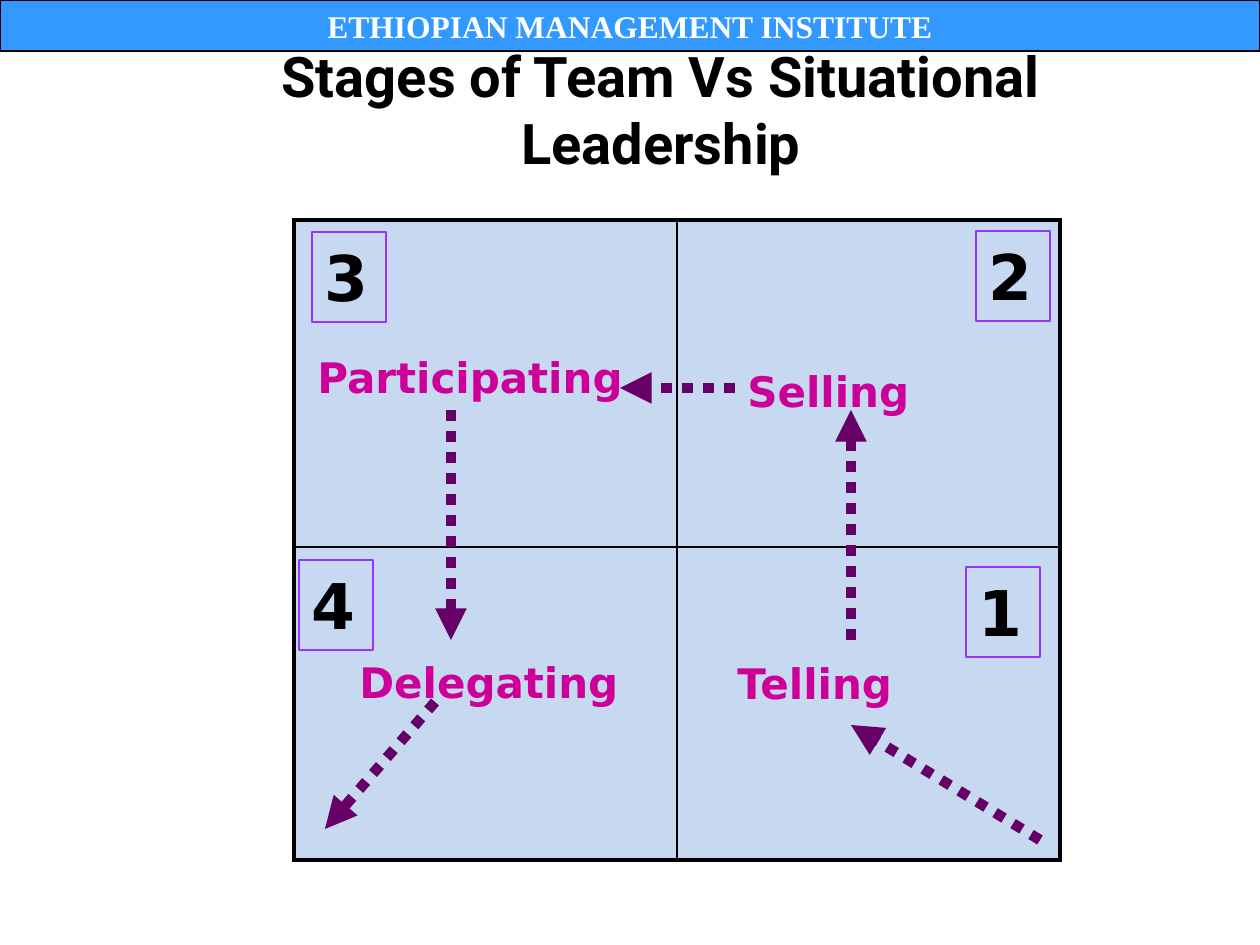
from pptx import Presentation
from pptx.dml.color import RGBColor
from pptx.enum.shapes import MSO_CONNECTOR, MSO_SHAPE
from pptx.enum.text import MSO_ANCHOR, MSO_AUTO_SIZE, PP_ALIGN
from pptx.oxml.ns import qn
from pptx.util import Emu, Pt
from lxml.etree import SubElement

THEME = {
    "banner": "3399FF", "edge": "000000", "cell": "C6D9F1",
    "badge": "9933FF", "arrow": "660066",
    "head": {"name": "Times New Roman", "size": 18, "color": "FFFFFF"},
    "title": {"name": "Roboto", "size": 32, "color": "000000"},
    "number": {"name": "DejaVu Sans", "size": 36, "color": "000000"},
    "label": {"name": "DejaVu Sans", "size": 24, "color": "CC0099"},
}


def px(*spans):
    """Turn px lengths into EMU, at 126 px to the inch."""
    return [Emu(round(n * 914400 / 126)) for n in spans]


def write(shape, text, style, align=PP_ALIGN.LEFT, anchor=MSO_ANCHOR.TOP):
    frame = shape.text_frame
    frame.text = text
    frame_look = {"word_wrap": True, "auto_size": MSO_AUTO_SIZE.NONE,
                  "vertical_anchor": anchor}
    for key, value in frame_look.items():
        setattr(frame, key, value)
    para = frame.paragraphs[0]
    para.alignment = align
    look = THEME[style]
    font = para.runs[0].font
    for key, value in {"name": look["name"], "size": Pt(look["size"]), "bold": True}.items():
        setattr(font, key, value)
    font.color.rgb = RGBColor.from_string(look["color"])


deck = Presentation()
deck.slide_width, deck.slide_height = px(1260, 945)
slide = deck.slides.add_slide(deck.slide_layouts[5])
shapes = slide.shapes

# Title
title = shapes.title
title.left, title.top, title.width, title.height = px(136, 77, 1050, 63)
write(title, "Stages of Team Vs Situational Leadership", "title",
      PP_ALIGN.CENTER, MSO_ANCHOR.MIDDLE)

# Banner
banner = shapes.add_shape(MSO_SHAPE.RECTANGLE, *px(0, 0, 1260, 51))
banner.shadow.inherit = False
banner.fill.solid()
banner.fill.fore_color.rgb = RGBColor.from_string(THEME["banner"])
banner.line.color.rgb = RGBColor.from_string(THEME["edge"])
banner.line.width = Pt(0.75)
write(banner, "ETHIOPIAN MANAGEMENT INSTITUTE", "head",
      PP_ALIGN.CENTER, MSO_ANCHOR.MIDDLE)

# Two by two grid: thick outer edges, thin inner ones
grid = shapes.add_table(2, 2, *px(294, 220, 766, 640)).table
for col in grid.columns:
    col.width = px(383)[0]
for row, height in zip(grid.rows, px(327, 313)):
    row.height = height
for r in range(2):
    for c in range(2):
        cell = grid.cell(r, c)
        props = cell._tc.get_or_add_tcPr()
        outer = {"lnL": c == 0, "lnR": c == 1, "lnT": r == 0, "lnB": r == 1}
        for side, thick in outer.items():
            edge = SubElement(props, qn(f"a:{side}"), w=str(Pt(2.25 if thick else 1)))
            paint = SubElement(edge, qn("a:solidFill"))
            SubElement(paint, qn("a:srgbClr"), val=THEME["edge"])
        cell.fill.solid()
        cell.fill.fore_color.rgb = RGBColor.from_string(THEME["cell"])

# Stage numbers
for text, left, top in [("3", 312, 232), ("2", 976, 231), ("4", 299, 560), ("1", 966, 567)]:
    badge = shapes.add_shape(MSO_SHAPE.RECTANGLE, *px(left, top, 74, 90))
    badge.shadow.inherit = False
    badge.fill.background()
    badge.line.color.rgb = RGBColor.from_string(THEME["badge"])
    badge.line.width = Pt(0.75)
    write(badge, text, "number")

# Leadership styles
for text, left, top, width in [
    ("Participating", 305, 345, 346),
    ("Selling", 735, 359, 284),
    ("Delegating", 347, 650, 305),
    ("Telling", 725, 651, 284),
]:
    write(shapes.add_textbox(*px(left, top, width, 63)), text, "label")

# Path from stage to stage
for ends in [
    (1040, 840, 851, 725),
    (851, 640, 851, 410),
    (735, 388, 620, 388),
    (451, 410, 451, 640),
    (435, 702, 325, 829),
]:
    arrow = shapes.add_connector(MSO_CONNECTOR.STRAIGHT, *px(*ends))
    arrow.line.color.rgb = RGBColor.from_string(THEME["arrow"])
    arrow.line.width = Pt(6)
    line = arrow.line._get_or_add_ln()
    SubElement(line, qn("a:prstDash"), val="sysDot")
    SubElement(line, qn("a:tailEnd"), type="triangle")
    SubElement(arrow._element.spPr, qn("a:effectLst"))

deck.save("out.pptx")
